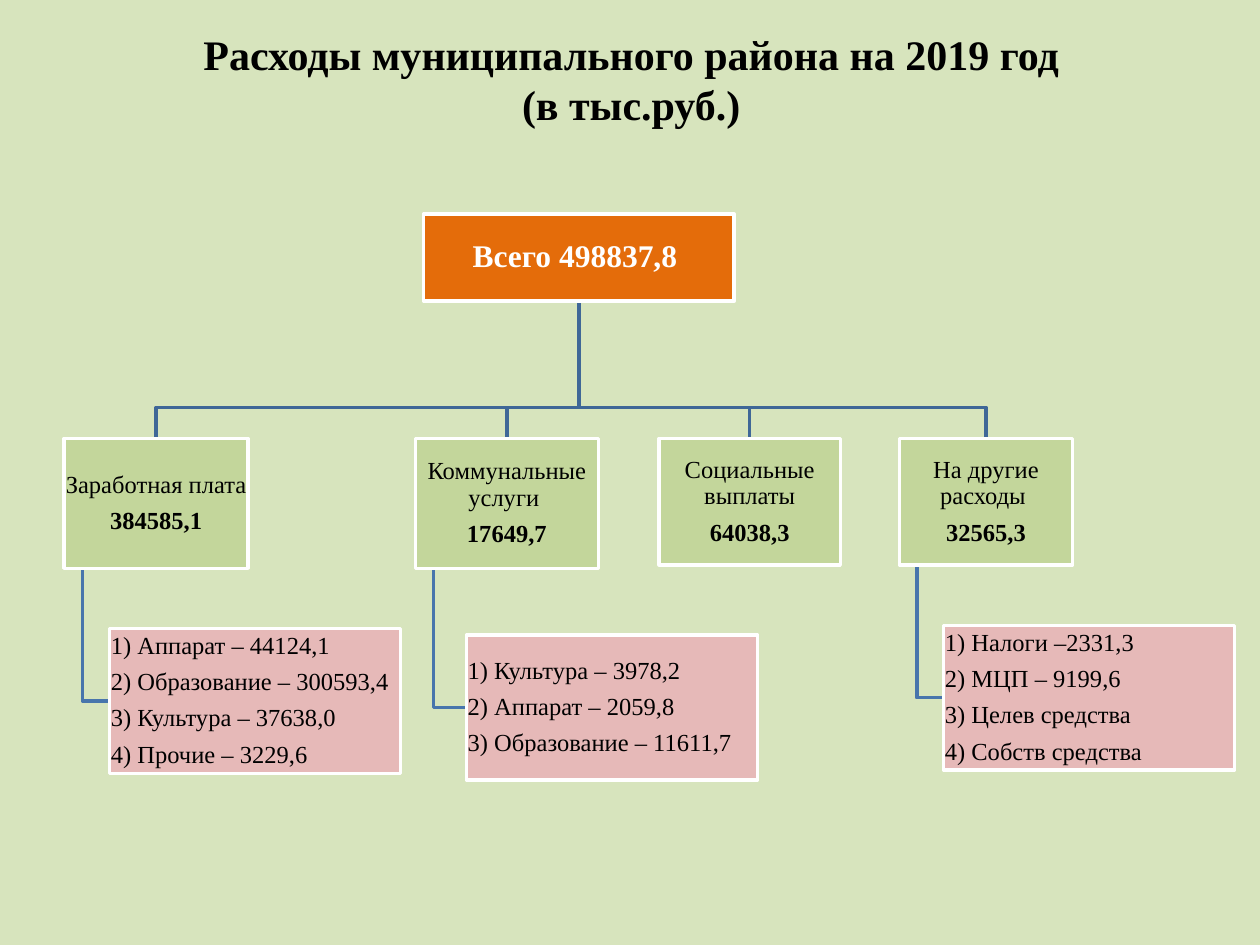
"""Build a slide with a tree of municipal district expenses for 2019."""
from pptx import Presentation
from pptx.dml.color import RGBColor
from pptx.enum import shapes, text
from pptx.util import Pt

FONT = "Times New Roman"
COLORS = {
    "background": "D7E4BD",
    "total": "E46C0A",
    "category": "C3D69B",
    "details": "E6B9B8",
    "border": "FFFFFF",
    "branch": "3F6797",
    "sub_branch": "4875AC",
    "dark_text": "000000",
    "light_text": "FFFFFF",
}
TOTAL_BOX = (242, 122.4, 177.6, 49.7)
TRUNK_X, TRUNK_Y = 330.8, 232.8
CATEGORY_TOP = 250.6
DETAILS_SIZE = (166.3, 82.8)
SUB_BRANCH_SHARE = 0.1

CATEGORIES = [
    {"name": "Заработная плата ", "amount": "384585,1",
     "left": 36.7, "size": (105.1, 74.2), "details_at": (62.6, 359.1),
     "details": ["1) Аппарат – 44124,1", "2) Образование – 300593,4",
                 "3) Культура – 37638,0", "4) Прочие – 3229,6"]},
    {"name": "Коммунальные услуги ", "amount": "17649,7",
     "left": 237.4, "size": (104.5, 74.2), "details_at": (266.5, 362.9),
     "details": ["1) Культура – 3978,2", "2) Аппарат – 2059,8",
                 "3) Образование – 11611,7"]},
    {"name": "Социальные выплаты", "amount": "64038,3",
     "left": 376.6, "size": (103.6, 72.2), "details": []},
    {"name": "На другие расходы ", "amount": "32565,3",
     "left": 514, "size": (98.9, 72.2), "details_at": (539.2, 357.3),
     "details": ["1) Налоги –2331,3 ", "2) МЦП – 9199,6",
                 "3) Целев средства", "4) Собств средства"]},
]


def color(name):
    return RGBColor.from_string(COLORS[name])


def format_font(font, size, color_name, bold=False):
    font.name = FONT
    font.size = Pt(size)
    font.bold = bold
    font.color.rgb = color(color_name)


def add_title(slide, lines):
    title = slide.shapes.title
    title.left, title.top, title.width, title.height = map(Pt, (36.7, 0, 648, 90))
    frame = title.text_frame
    frame.text = "\v".join(lines)
    frame.vertical_anchor = text.MSO_ANCHOR.MIDDLE
    paragraph = frame.paragraphs[0]
    paragraph.alignment = text.PP_ALIGN.CENTER
    format_font(paragraph.font, 24, "dark_text", bold=True)


def add_branch(slide, points, color_name):
    start, *rest = [(Pt(x), Pt(y)) for x, y in points]
    builder = slide.shapes.build_freeform(*start)
    builder.add_line_segments(rest, close=False)
    shape = builder.convert_to_shape()
    shape.shadow.inherit = False
    shape.fill.background()
    shape.line.color.rgb = color(color_name)
    shape.line.width = Pt(2)


def add_box(slide, box, fill, lines, size=14, text_color="dark_text",
            alignment=text.PP_ALIGN.CENTER, bold_last=False):
    shape = slide.shapes.add_shape(shapes.MSO_SHAPE.RECTANGLE, *map(Pt, box))
    shape.shadow.inherit = False
    shape.fill.solid()
    shape.fill.fore_color.rgb = color(fill)
    shape.line.color.rgb = color("border")
    shape.line.width = Pt(2)
    frame = shape.text_frame
    frame.word_wrap = True
    frame.vertical_anchor = text.MSO_ANCHOR.MIDDLE
    frame.margin_left = frame.margin_right = Pt(0.7)
    frame.margin_top = frame.margin_bottom = Pt(0.7)
    frame.text = "\n".join(lines)
    for paragraph in frame.paragraphs:
        paragraph.alignment = alignment
        paragraph.line_spacing = 0.9
        paragraph.space_after = Pt(size * 0.4)
        format_font(paragraph.font, size, text_color)
    frame.paragraphs[-1].font.bold = bold_last


def add_category_branches(slide, category):
    left, (width, height) = category["left"], category["size"]
    center = left + width / 2
    total_bottom = TOTAL_BOX[1] + TOTAL_BOX[3]
    add_branch(slide, [(TRUNK_X, total_bottom), (TRUNK_X, TRUNK_Y),
                       (center, TRUNK_Y), (center, CATEGORY_TOP)], "branch")
    if category["details"]:
        x = left + width * SUB_BRANCH_SHARE
        details_left, details_top = category["details_at"]
        middle = details_top + DETAILS_SIZE[1] / 2
        add_branch(slide, [(x, CATEGORY_TOP + height), (x, middle),
                           (details_left, middle)], "sub_branch")


def add_category_boxes(slide, category):
    add_box(slide, (category["left"], CATEGORY_TOP, *category["size"]), "category",
            [category["name"], category["amount"]], bold_last=True)
    if category["details"]:
        add_box(slide, (*category["details_at"], *DETAILS_SIZE), "details",
                category["details"], alignment=text.PP_ALIGN.JUSTIFY)


def main():
    presentation = Presentation()
    presentation.slide_width, presentation.slide_height = Pt(720), Pt(540)
    slide = presentation.slides.add_slide(presentation.slide_layouts[5])
    slide.background.fill.solid()
    slide.background.fill.fore_color.rgb = color("background")
    add_title(slide, ["Расходы муниципального района на 2019 год", "(в тыс.руб.)"])
    for category in reversed(CATEGORIES):
        add_category_branches(slide, category)
    add_box(slide, TOTAL_BOX, "total", ["Всего 498837,8 "], size=18,
            text_color="light_text", bold_last=True)
    for category in CATEGORIES:
        add_category_boxes(slide, category)
    presentation.save("out.pptx")


if __name__ == "__main__":
    main()
